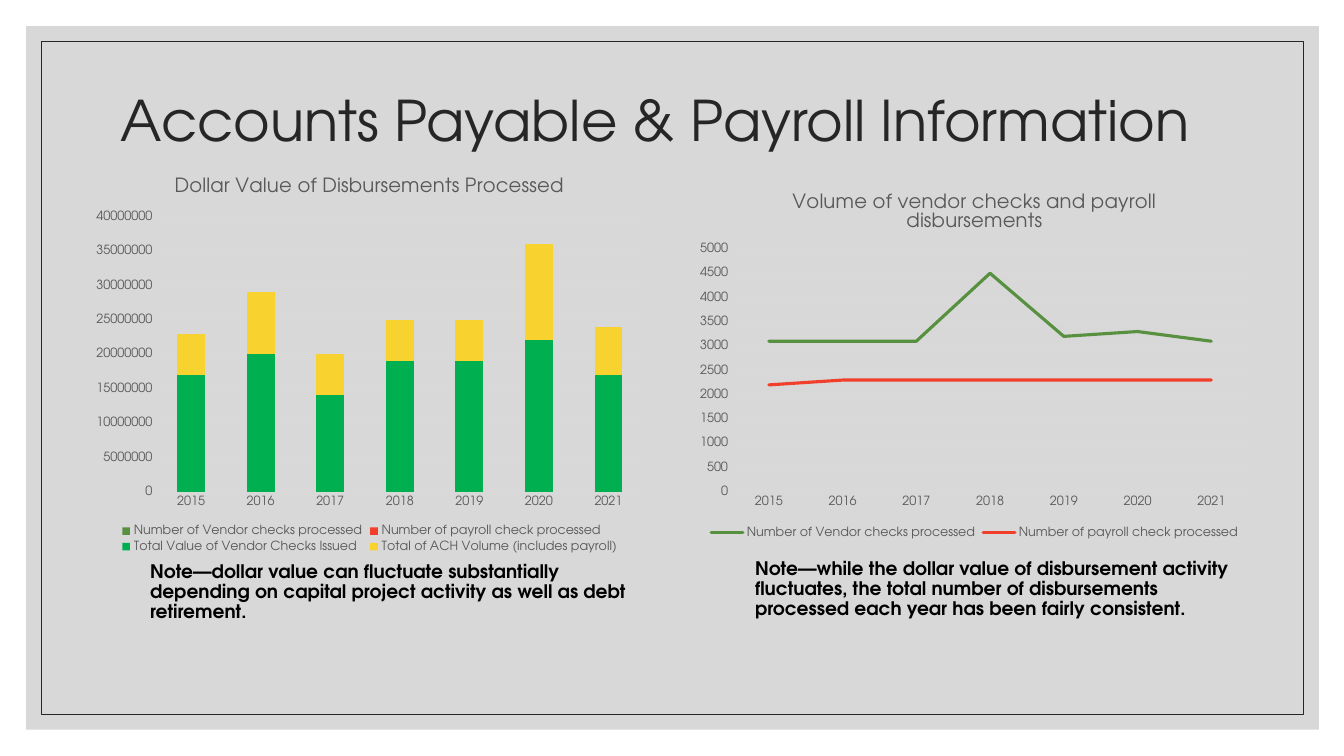
from lxml import etree
from pptx import Presentation
from pptx import util as u
from pptx.chart import data as chart_data
from pptx.dml import color
from pptx.enum import chart as charts, shapes, text
from pptx.oxml import parse_xml
from pptx.oxml import ns

FONT = "TeX Gyre Adventor"
INK, GREY, RULE = "262626", "595959", "D9D9D9"
MILLION = 1000000
YEARS = [str(year) for year in range(2015, 2022)]
VENDOR_CHECKS = "Number of Vendor checks processed"
PAYROLL_CHECKS = "Number of payroll check processed"

DOLLARS = {
    "kind": charts.XL_CHART_TYPE.COLUMN_STACKED,
    "box": (0.84, 1.57, 5.65, 3.95),
    "plot": (0.71, 0.58, 4.83, 2.73),
    "title": "Dollar Value of Disbursements Processed",
    "scale": {"minimum_scale": 0, "maximum_scale": 40 * MILLION,
              "major_unit": 5 * MILLION},
    "series": [
        (VENDOR_CHECKS, "57903F", [0] * 7),
        (PAYROLL_CHECKS, "F03F2B", [0] * 7),
        ("Total Value of Vendor Checks Issued", "00B050",
         [value * MILLION for value in (17, 20, 14, 19, 19, 22, 17)]),
        ("Total of ACH Volume (includes payroll)", "F8D22F",
         [value * MILLION for value in (6, 9, 6, 6, 6, 14, 7)]),
    ],
}
VOLUME = {
    "kind": charts.XL_CHART_TYPE.LINE,
    "box": (6.84, 1.74, 5.65, 3.64),
    "plot": (0.42, 0.73, 5.12, 2.41),
    "title": "Volume of vendor checks and payroll disbursements",
    "scale": {"minimum_scale": 0, "maximum_scale": 5000, "major_unit": 500},
    "series": [
        (VENDOR_CHECKS, "57903F", [3100, 3100, 3100, 4500, 3200, 3300, 3100]),
        (PAYROLL_CHECKS, "F03F2B", [2200] + [2300] * 6),
    ],
}


def apply(target, values):
    """Set each named attribute of the target."""
    for name, value in values.items():
        setattr(target, name, value)


def rgb(code):
    """Turn a hex string into a colour."""
    return color.RGBColor.from_string(code)


def style_font(font, size, code, bold=False):
    """Give a font its name, size, colour and weight."""
    apply(font, {"name": FONT, "size": u.Pt(size), "bold": bold})
    font.color.rgb = rgb(code)


def style_line(line, code, width):
    """Give a line its colour and width."""
    line.color.rgb = rgb(code)
    line.width = u.Pt(width)


def add_panel(slide, box, fill=None, line=None):
    """Add a plain rectangle with a translucent fill or an outline."""
    shape = slide.shapes.add_shape(
        shapes.MSO_SHAPE.RECTANGLE, *map(u.Inches, box))
    shape.shadow.inherit = False
    if fill:
        shape.fill.solid()
        shape.fill.fore_color.rgb = rgb(fill)
        tint = next(shape._element.spPr.iter(ns.qn("a:srgbClr")))
        etree.SubElement(tint, ns.qn("a:alpha"), val="60000")
    else:
        shape.fill.background()
    if line:
        style_line(shape.line, line, 0.5)
    else:
        shape.line.fill.background()


def add_text(slide, box, words, size, code, bold=False):
    """Add a wrapped, vertically centred text box."""
    frame = slide.shapes.add_textbox(*map(u.Inches, box)).text_frame
    apply(frame, {"word_wrap": True,
                  "vertical_anchor": text.MSO_ANCHOR.MIDDLE})
    paragraph = frame.paragraphs[0]
    paragraph.line_spacing = 0.9
    run = paragraph.add_run()
    run.text = words
    style_font(run.font, size, code, bold)


def place_plot(chart, plot_box, chart_size):
    """Fix the inner plot area, given in inches within the chart."""
    area = chart._chartSpace.chart.plotArea
    for layout in area.findall(ns.qn("c:layout")):
        area.remove(layout)
    parts = "".join(
        f'<c:{name} val="{length / whole:.4f}"/>'
        for name, length, whole in zip("xywh", plot_box, chart_size * 2))
    area.insert(0, parse_xml(
        f'<c:layout {ns.nsdecls("c")}><c:manualLayout>'
        '<c:layoutTarget val="inner"/><c:xMode val="edge"/>'
        f'<c:yMode val="edge"/>{parts}</c:manualLayout></c:layout>'))


def style_axes(chart, scale):
    """Style both axes and set the value scale."""
    for axis in (chart.category_axis, chart.value_axis):
        apply(axis, {"major_tick_mark": charts.XL_TICK_MARK.NONE,
                     "minor_tick_mark": charts.XL_TICK_MARK.NONE})
        style_font(axis.tick_labels.font, 9, GREY)
    style_line(chart.category_axis.format.line, RULE, 0.75)
    values = chart.value_axis
    apply(values, scale)
    values.format.line.fill.background()
    style_line(values.major_gridlines.format.line, RULE, 0.75)


def style_series(series, code, is_line):
    """Colour one series as a round-capped line or as solid columns."""
    if is_line:
        series.smooth = False
        series.marker.style = charts.XL_MARKER_STYLE.NONE
        style_line(series.format.line, code, 2.25)
        next(series._element.iter(ns.qn("a:ln"))).set("cap", "rnd")
    else:
        series.format.fill.solid()
        series.format.fill.fore_color.rgb = rgb(code)


def add_chart(slide, details):
    """Add one titled chart with a legend below."""
    data = chart_data.CategoryChartData(number_format="General")
    data.categories = YEARS
    for name, _, values in details["series"]:
        data.add_series(name, values)
    chart = slide.shapes.add_chart(
        details["kind"], *map(u.Inches, details["box"]), data).chart
    style_font(chart.font, 10, "000000")
    chart.has_title = True
    frame = chart.chart_title.text_frame
    frame.text = details["title"]
    style_font(frame.paragraphs[0].runs[0].font, 14, GREY)
    chart.has_legend = True
    apply(chart.legend, {"position": charts.XL_LEGEND_POSITION.BOTTOM,
                         "include_in_layout": False})
    style_font(chart.legend.font, 9, GREY)
    style_axes(chart, details["scale"])
    place_plot(chart, details["plot"], details["box"][2:])
    plot = chart.plots[0]
    plot.vary_by_categories = False
    is_line = details["kind"] == charts.XL_CHART_TYPE.LINE
    if not is_line:
        apply(plot, {"gap_width": 150, "overlap": 100})
    for series, (_, code, _) in zip(plot.series, details["series"]):
        style_series(series, code, is_line)


def main():
    """Build the slide and save it."""
    presentation = Presentation()
    apply(presentation, {"slide_width": u.Inches(13.33),
                         "slide_height": u.Inches(7.5)})
    slide = presentation.slides.add_slide(presentation.slide_layouts[6])
    add_panel(slide, (0.26, 0.26, 12.82, 6.98), fill="BFBFBF")
    add_panel(slide, (0.41, 0.41, 12.52, 6.68), line=INK)
    add_text(slide, (1.1, 0.47, 11, 1.5),
             "Accounts Payable & Payroll Information", 40, INK)
    add_text(slide, (1.39, 5.53, 5.1, 0.7),
             "Note—dollar value can fluctuate substantially depending on "
             "capital project activity as well as debt retirement.",
             13.3, "000000", True)
    add_text(slide, (7.39, 5.5, 5.1, 0.7),
             "Note—while the dollar value of disbursement activity "
             "fluctuates, the total number of disbursements processed each "
             "year has been fairly consistent.", 13.3, "000000", True)
    for details in (DOLLARS, VOLUME):
        add_chart(slide, details)
    presentation.save("out.pptx")


if __name__ == "__main__":
    main()
